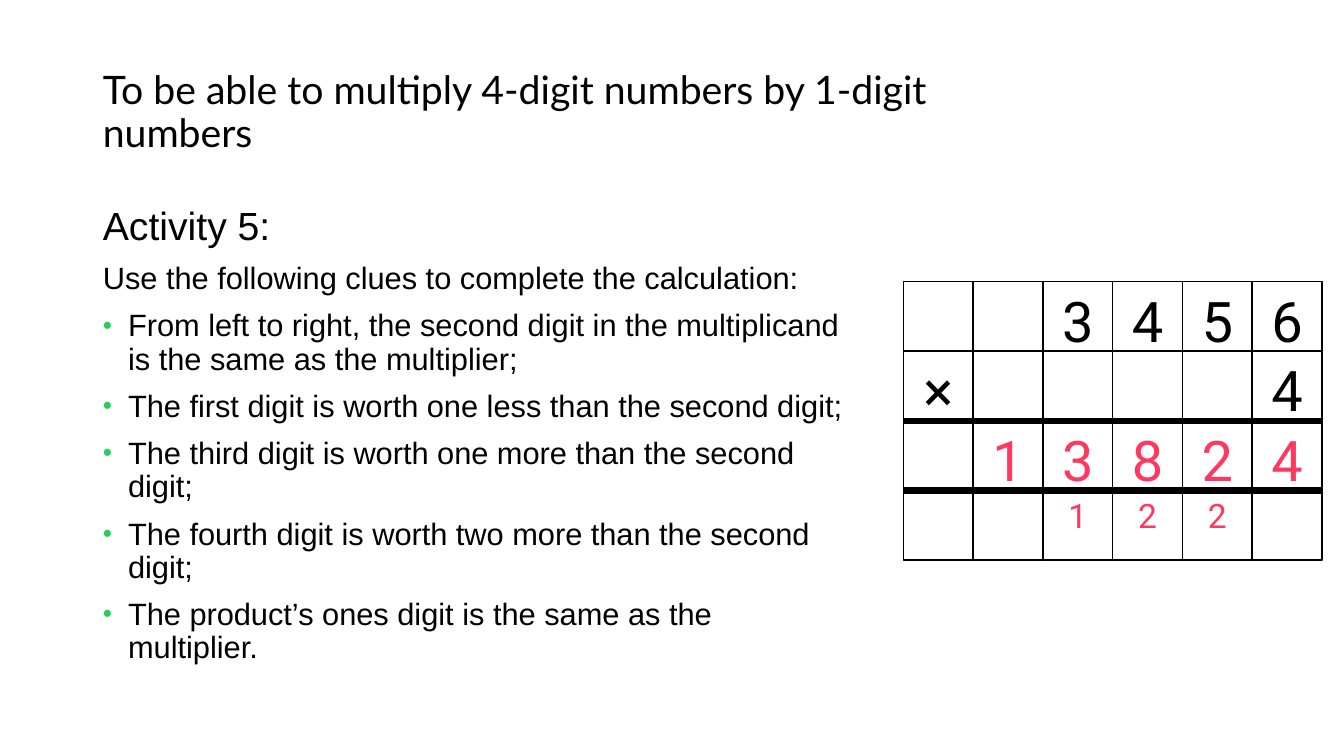
from lxml import etree
from pptx import Presentation
from pptx import util as u
from pptx.dml.color import RGBColor
from pptx.enum import shapes, text
from pptx.oxml import ns

# Content
TITLE = "To be able to multiply 4-digit numbers by 1-digit numbers"
HEADING = "Activity 5:"
INTRO = "Use the following clues to complete the calculation:"
CLUES = [
    "From left to right, the second digit in the multiplicand is the same as the multiplier;",
    "The first digit is worth one less than the second digit;",
    "The third digit is worth one more than the second digit;",
    "The fourth digit is worth two more than the second digit;",
    "The product’s ones digit is the same as the multiplier.",
]
COLORS = {"ink": "000000", "paper": "FFFFFF", "answer": "FF3860", "bullet": "23D160"}
# One row each: digits (a space is an empty cell), size, colour
CALCULATION = [
    ("  3456", 40, "ink"),
    ("×    4", 40, "ink"),
    (" 13824", 40, "answer"),
    ("  122 ", 24, "answer"),
]
RULED_ROWS = (2, 3)  # heavy lines above these rows

# Layout in inches
WIDTH, HEIGHT = 13.33, 7.5
TITLE_BOX = (0.92, 0.4, 9.6, 1.45)
BODY_BOX = (0.92, 2, 7.58, 4.76)
GRID_LEFT, GRID_TOP, GRID_WIDTH = 8.96, 2.79, 4.15
CELL = GRID_WIDTH / len(CALCULATION[0][0])


def color(name):
    return RGBColor.from_string(COLORS[name])


def place(sp, box):
    for name, value in zip(("left", "top", "width", "height"), box):
        setattr(sp, name, u.Inches(value))


def write(p, words, font, size, ink="ink", **formats):
    for name, value in formats.items():
        setattr(p, name, value)
    r = p.add_run()
    r.text = words
    r.font.name, r.font.size = font, u.Pt(size)
    r.font.color.rgb = color(ink)


def set_bullet(p, shown):
    pPr = p._p.get_or_add_pPr()
    pPr.set("marL", str(u.Inches(0.25) if shown else 0))
    pPr.set("indent", str(u.Inches(-0.25) if shown else 0))
    if not shown:
        etree.SubElement(pPr, ns.qn("a:buNone"))
        return
    clr = etree.SubElement(pPr, ns.qn("a:buClr"))
    etree.SubElement(clr, ns.qn("a:srgbClr"), val=COLORS["bullet"])
    etree.SubElement(pPr, ns.qn("a:buSzPct"), val="85000")
    etree.SubElement(pPr, ns.qn("a:buFont"), typeface="Arial")
    etree.SubElement(pPr, ns.qn("a:buChar"), char="•")


def add_cell(s, row, col, digit, size, ink):
    sp = s.shapes.add_shape(shapes.MSO_SHAPE.RECTANGLE, 0, 0, 0, 0)
    place(sp, (GRID_LEFT + col * CELL, GRID_TOP + row * CELL, CELL, CELL))
    sp.shadow.inherit = False
    sp.fill.solid()
    sp.fill.fore_color.rgb = color("paper")
    sp.line.color.rgb = color("ink")
    sp.line.width = u.Pt(1)
    if digit != " ":
        tf = sp.text_frame
        tf.vertical_anchor = text.MSO_ANCHOR.TOP
        write(tf.paragraphs[0], digit, "Roboto", size, ink, alignment=text.PP_ALIGN.CENTER)


def add_rule(s, row):
    y = u.Inches(GRID_TOP + row * CELL)
    line = s.shapes.add_connector(shapes.MSO_CONNECTOR.STRAIGHT, u.Inches(GRID_LEFT), y,
                                  u.Inches(GRID_LEFT + GRID_WIDTH), y)
    line.line.color.rgb = color("ink")
    line.line.width = u.Pt(4.5)
    etree.SubElement(line._element.spPr, ns.qn("a:effectLst"))


def main():
    prs = Presentation()
    prs.slide_width, prs.slide_height = u.Inches(WIDTH), u.Inches(HEIGHT)
    s = prs.slides.add_slide(prs.slide_layouts[1])
    title, body = s.placeholders
    for sp, box, anchor in ((title, TITLE_BOX, text.MSO_ANCHOR.MIDDLE),
                            (body, BODY_BOX, text.MSO_ANCHOR.TOP)):
        place(sp, box)
        tf = sp.text_frame
        tf.word_wrap, tf.auto_size = True, text.MSO_AUTO_SIZE.NONE
        tf.vertical_anchor = anchor

    # Title
    write(title.text_frame.paragraphs[0], TITLE, "Lato", 28,
          alignment=text.PP_ALIGN.LEFT, line_spacing=0.9)

    # Activity and clues
    lines = [(HEADING, 28, False), (INTRO, 22, False)] + [(clue, 22, True) for clue in CLUES]
    tf = body.text_frame
    for i, (words, size, bulleted) in enumerate(lines):
        p = tf.add_paragraph() if i else tf.paragraphs[0]
        set_bullet(p, bulleted)
        write(p, words, "Arial", size, line_spacing=0.9, space_before=u.Pt(10 if i else 0))

    # Written multiplication
    for row, (digits, size, ink) in enumerate(CALCULATION):
        for col, digit in enumerate(digits):
            add_cell(s, row, col, digit, size, ink)
    for row in RULED_ROWS:
        add_rule(s, row)

    prs.save("out.pptx")


if __name__ == "__main__":
    main()
